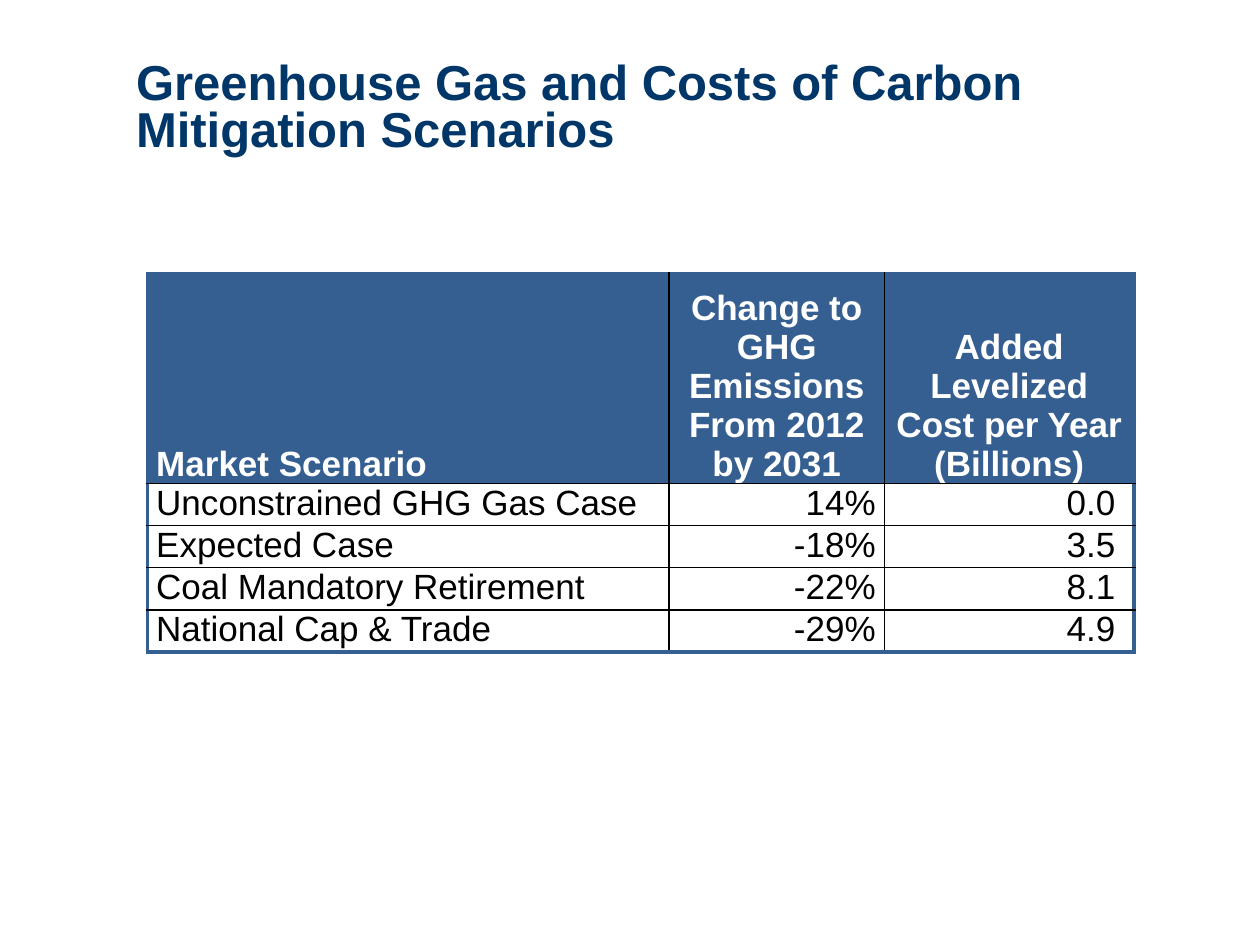
from lxml import etree
from pptx import Presentation
from pptx import util as u
from pptx.dml.color import RGBColor
from pptx.enum import text
from pptx.oxml.ns import qn

COLORS = {"title": "013668", "frame": "365F91", "grid": "000000",
          "header_text": "FFFFFF", "body_text": "000000"}
COLUMN_WIDTHS = [4.14, 1.71, 1.98]
HEADER_HEIGHT, ROW_HEIGHT = 1.62, 0.32
ROWS = [
    ["Market Scenario", "Change to GHG Emissions From 2012 by 2031",
     "Added Levelized Cost per Year\n(Billions)"],
    ["Unconstrained GHG Gas Case", "14%", "0.0 "],
    ["Expected Case", "-18%", "3.5 "],
    ["Coal Mandatory Retirement", "-22%", "8.1 "],
    ["National Cap & Trade", "-29%", "4.9 "],
]


class SlideBuilder:
    font_name = "Arial"

    def __init__(self, slide):
        self.slide = slide

    def add_run(self, paragraph, words, size, color, bold):
        run = paragraph.add_run()
        run.text = words
        run.font.name = self.font_name
        run.font.size = u.Pt(size)
        run.font.bold = bold
        run.font.color.rgb = RGBColor.from_string(COLORS[color])

    def add_title(self, words, left, top, width, height):
        shape = self.slide.shapes.add_textbox(*map(u.Inches, (left, top, width, height)))
        frame = shape.text_frame
        frame.word_wrap = True
        frame.vertical_anchor = text.MSO_ANCHOR.BOTTOM
        frame.margin_left = frame.margin_right = frame.margin_top = frame.margin_bottom = 0
        paragraph = frame.paragraphs[0]
        paragraph.line_spacing = u.Pt(27)
        self.add_run(paragraph, words, 28, "title", True)

    def add_table(self, rows, left, top):
        height = HEADER_HEIGHT + ROW_HEIGHT * (len(rows) - 1)
        shape = self.slide.shapes.add_table(
            len(rows), len(COLUMN_WIDTHS), u.Inches(left), u.Inches(top),
            u.Inches(sum(COLUMN_WIDTHS)), u.Inches(height))
        table = shape.table
        table.first_row = table.horz_banding = False
        for column, width in zip(table.columns, COLUMN_WIDTHS):
            column.width = u.Inches(width)
        for row_index, values in enumerate(rows):
            is_header = row_index == 0
            table.rows[row_index].height = u.Inches(HEADER_HEIGHT if is_header else ROW_HEIGHT)
            for column_index, words in enumerate(values):
                cell = table.cell(row_index, column_index)
                self.set_borders(cell, {
                    "L": column_index == 0,
                    "R": column_index == len(values) - 1,
                    "T": is_header,
                    "B": row_index == len(rows) - 1,
                })
                self.fill_cell(cell, words, is_header, column_index == 0)

    def set_borders(self, cell, outer_sides):
        """Draw thick frame lines on outer sides and thin grid lines elsewhere."""
        properties = cell._tc.get_or_add_tcPr()
        for side, is_outer in outer_sides.items():
            line = etree.SubElement(properties, qn(f"a:ln{side}"),
                                    w=str(u.Pt(2.25 if is_outer else 1)))
            solid = etree.SubElement(line, qn("a:solidFill"))
            etree.SubElement(solid, qn("a:srgbClr"),
                             val=COLORS["frame" if is_outer else "grid"])

    def fill_cell(self, cell, words, is_header, is_label):
        cell.margin_left = cell.margin_right = u.Inches(0.07)
        cell.margin_top = cell.margin_bottom = 0
        if is_header:
            cell.fill.solid()
            cell.fill.fore_color.rgb = RGBColor.from_string(COLORS["frame"])
            cell.vertical_anchor = text.MSO_ANCHOR.BOTTOM
        else:
            cell.fill.background()
        if is_label:
            alignment = text.PP_ALIGN.LEFT
        else:
            alignment = text.PP_ALIGN.CENTER if is_header else text.PP_ALIGN.RIGHT
        frame = cell.text_frame
        for index, line in enumerate(words.split("\n")):
            paragraph = frame.add_paragraph() if index else frame.paragraphs[0]
            paragraph.alignment = alignment
            self.add_run(paragraph, line, 20,
                         "header_text" if is_header else "body_text", is_header)


def main():
    presentation = Presentation()
    presentation.slide_width = u.Inches(10)
    presentation.slide_height = u.Inches(7.5)
    slide = presentation.slides.add_slide(presentation.slide_layouts[6])
    builder = SlideBuilder(slide)
    builder.add_title("Greenhouse Gas and Costs of Carbon Mitigation Scenarios",
                      1.08, 0.12, 8.42, 1.13)
    builder.add_table(ROWS, 1.17, 2.17)
    presentation.save("out.pptx")


if __name__ == "__main__":
    main()
